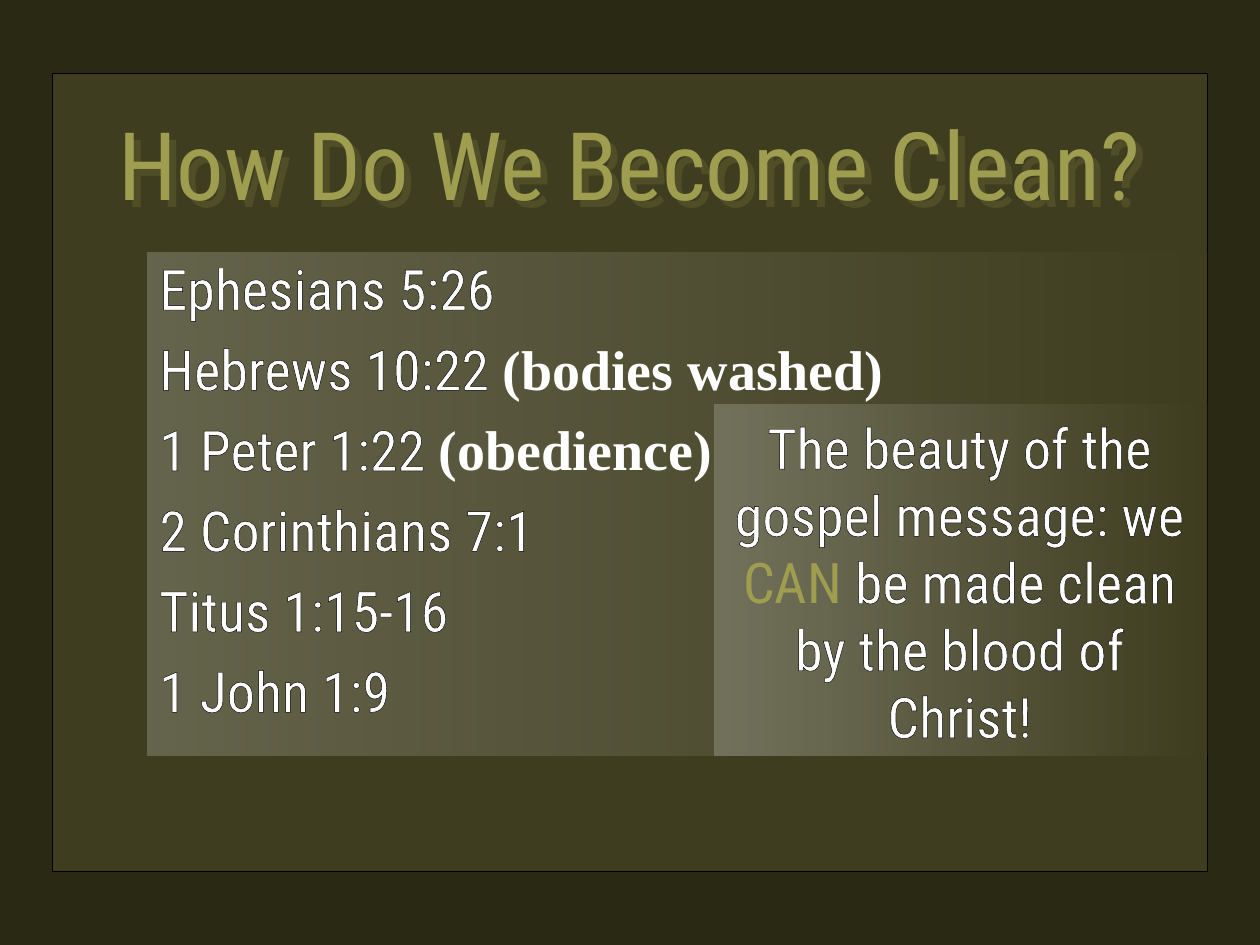
from lxml.etree import SubElement
from pptx import Presentation
from pptx.dml.color import RGBColor
from pptx.enum.shapes import MSO_SHAPE
from pptx.enum.text import MSO_ANCHOR, MSO_AUTO_SIZE, PP_ALIGN
from pptx.oxml import parse_xml
from pptx.oxml.ns import nsdecls, qn
from pptx.util import Pt

BLACK = RGBColor(0x00, 0x00, 0x00)
WHITE = RGBColor(0xFF, 0xFF, 0xFF)
BORDER = RGBColor(0x2A, 0x29, 0x14)
PANEL = RGBColor(0x3E, 0x3D, 0x1F)
ACCENT = RGBColor(0x9F, 0x9D, 0x4F)
TITLE_SHADOW = RGBColor(0x4F, 0x4E, 0x27)

MAIN_FONT = "Roboto Condensed"
NOTE_FONT = "Times New Roman"

FRAME = (30, 42, 660, 456)
VERSES = [
    ("Ephesians 5:26", ""),
    ("Hebrews 10:22 ", "(bodies washed)"),
    ("1 Peter 1:22 ", "(obedience)"),
    ("2 Corinthians 7:1", ""),
    ("Titus 1:15-16", ""),
    ("1 John 1:9", ""),
]


def add_rectangle(page, left, top, width, height, fill=None, line=None):
    box = page.shapes.add_shape(
        MSO_SHAPE.RECTANGLE, Pt(left), Pt(top), Pt(width), Pt(height))
    box.shadow.inherit = False
    if fill is not None:
        box.fill.solid()
        box.fill.fore_color.rgb = fill
    if line is None:
        box.line.fill.background()
    else:
        box.line.color.rgb = line
        box.line.width = Pt(0.75)
    return box


def add_glow(page, left, top, width, height):
    """Add a see-through rectangle that fades from white to the panel colour."""
    box = add_rectangle(page, left, top, width, height)
    box.rotation = 180
    box.fill.gradient()
    box.fill.gradient_angle = 0
    for stop, color in zip(box.fill.gradient_stops, (PANEL, WHITE)):
        stop.color.rgb = color
    for color in box._element.spPr.iter(qn("a:srgbClr")):
        SubElement(color, qn("a:alpha"), val="20000")


def add_text_box(page, left, top, width, height, anchor=MSO_ANCHOR.TOP,
                 auto_size=MSO_AUTO_SIZE.SHAPE_TO_FIT_TEXT):
    box = page.shapes.add_textbox(Pt(left), Pt(top), Pt(width), Pt(height))
    frame = box.text_frame
    frame.word_wrap = True
    frame.vertical_anchor = anchor
    frame.auto_size = auto_size
    return box


def add_span(para, text, size=32, font=MAIN_FONT, color=WHITE, bold=False,
             outline=0.75):
    span = para.add_run()
    span.text = text
    span.font.size = Pt(size)
    span.font.name = font
    span.font.bold = bold
    span.font.color.rgb = color
    if outline:
        span.font._element.insert(0, parse_xml(
            f'<a:ln {nsdecls("a")} w="{Pt(outline)}"><a:solidFill>'
            f'<a:srgbClr val="{BLACK}"/></a:solidFill></a:ln>'))


def add_text_shadow(box, color, distance):
    box._element.spPr.append(parse_xml(
        f'<a:effectLst {nsdecls("a")}>'
        f'<a:outerShdw dist="{Pt(distance)}" dir="2700000" algn="ctr" '
        f'rotWithShape="0"><a:srgbClr val="{color}"/></a:outerShdw>'
        '</a:effectLst>'))


def add_verses(page):
    frame = add_text_box(page, 84, 150, 438, 286).text_frame
    for index, (verse, note) in enumerate(VERSES):
        para = frame.add_paragraph() if index else frame.paragraphs[0]
        para.line_spacing = Pt(30)
        para.space_before = Pt(16)
        add_span(para, verse)
        if note:
            add_span(para, note, font=NOTE_FONT, bold=True, outline=0)


def add_title(page):
    left, top, width, _ = FRAME
    box = add_text_box(page, left, top, width, 102, anchor=MSO_ANCHOR.MIDDLE,
                       auto_size=MSO_AUTO_SIZE.NONE)
    add_text_shadow(box, TITLE_SHADOW, 5.6)
    para = box.text_frame.paragraphs[0]
    para.alignment = PP_ALIGN.CENTER
    add_span(para, "How Do We Become Clean?", size=54, color=ACCENT)


def add_message(page):
    box = add_text_box(page, 404.5, 232.5, 288, 201)
    para = box.text_frame.paragraphs[0]
    para.alignment = PP_ALIGN.CENTER
    para.space_before = Pt(16)
    add_span(para, "The beauty of the gospel message: we ")
    add_span(para, "CAN ", color=ACCENT, outline=2.25)
    add_span(para, "be made clean by the blood of Christ!")


def main():
    deck = Presentation()
    deck.slide_width, deck.slide_height = Pt(720), Pt(540)
    page = deck.slides.add_slide(deck.slide_layouts[6])
    page.background.fill.solid()
    page.background.fill.fore_color.rgb = BLACK

    add_rectangle(page, 0, 0, 720, 540, fill=BORDER)
    add_rectangle(page, *FRAME, fill=PANEL, line=BLACK)
    add_glow(page, 84, 144, 606, 288)
    add_verses(page)
    add_title(page)
    add_glow(page, 408, 231, 282, 201)
    add_message(page)
    deck.save("out.pptx")


if __name__ == "__main__":
    main()
